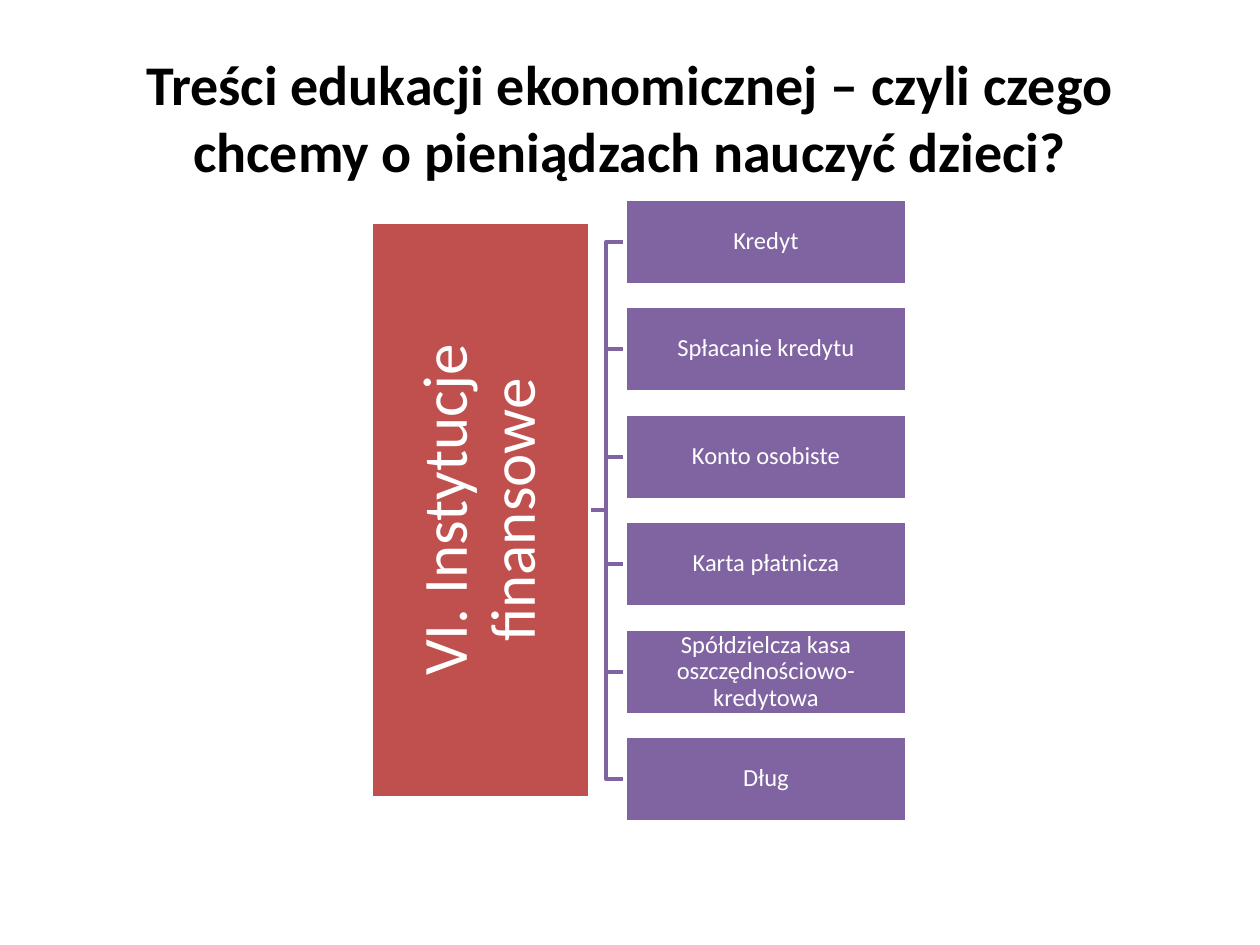
from dataclasses import dataclass

from pptx import Presentation
from pptx import util as u
from pptx.dml import color
from pptx.enum import shapes, text

SCALE = 914400 / 126
RED, PLUM, WHITE, BLACK = "C0504D", "8064A2", "FFFFFF", "000000"
LEFT, TOP, WIDE, HIGH, SPAN = 625, 199, 282, 86, 537
STEM, BEND, MID = 588, 606, 510
TERMS = [
    "Kredyt",
    "Spłacanie kredytu",
    "Konto osobiste",
    "Karta płatnicza",
    "Spółdzielcza kasa oszczędnościowo-kredytowa",
    "Dług",
]


@dataclass
class Box:
    words: str
    x: int
    y: int
    w: int
    h: int
    fill: str
    size: int
    pad: int
    turn: int = 0


def px(n: int) -> int:
    return round(n * SCALE)


def rgb(code: str) -> color.RGBColor:
    return color.RGBColor.from_string(code)


def put(item, vals: dict) -> None:
    for key, val in vals.items():
        setattr(item, key, val)


def write(shape, words: str, ink: str, font: dict, para: dict, frame: dict) -> None:
    body = shape.text_frame
    put(body, {"word_wrap": True, "vertical_anchor": text.MSO_ANCHOR.MIDDLE, **frame})
    line = body.paragraphs[0]
    put(line, {"alignment": text.PP_ALIGN.CENTER, **para})
    run = line.add_run()
    run.text = words
    put(run.font, {"name": "Calibri", **font})
    run.font.color.rgb = rgb(ink)


def edge(shape, code: str) -> None:
    shape.shadow.inherit = False
    shape.line.color.rgb = rgb(code)
    shape.line.width = u.Pt(2)


def draw_box(slide, box: Box) -> None:
    shape = slide.shapes.add_shape(
        shapes.MSO_SHAPE.RECTANGLE, *map(px, (box.x, box.y, box.w, box.h))
    )
    shape.rotation = box.turn
    shape.fill.solid()
    shape.fill.fore_color.rgb = rgb(box.fill)
    edge(shape, WHITE)
    sides = ("left", "right", "top", "bottom")
    write(
        shape, box.words, WHITE, {"size": u.Pt(box.size)}, {"line_spacing": 0.9},
        {f"margin_{side}": px(box.pad) for side in sides},
    )


def draw_link(slide, y: int) -> None:
    pen = slide.shapes.build_freeform(px(STEM), px(MID))
    spots = [(BEND, MID), (BEND, y), (LEFT, y)]
    pen.add_line_segments([(px(a), px(b)) for a, b in spots], close=False)
    shape = pen.convert_to_shape()
    shape.fill.background()
    edge(shape, PLUM)


def main() -> None:
    deck = Presentation()
    put(deck, {"slide_width": px(1260), "slide_height": px(945)})
    slide = deck.slides.add_slide(deck.slide_layouts[6])

    title = slide.shapes.add_textbox(*map(px, (63, 38, 1134, 157)))
    write(
        title, "Treści edukacji ekonomicznej – czyli czego chcemy o pieniądzach nauczyć dzieci?",
        BLACK, {"size": u.Pt(32), "bold": True}, {}, {},
    )

    tops = [TOP + round(SPAN * i / (len(TERMS) - 1)) for i in range(len(TERMS))]
    for top in tops:
        draw_link(slide, top + HIGH // 2)
    draw_box(slide, Box("VI. Instytucje finansowe", 193, 401, 575, 218, RED, 36, 4, 270))
    for term, top in zip(TERMS, tops):
        draw_box(slide, Box(term, LEFT, top, WIDE, HIGH, PLUM, 14, 1))

    deck.save("out.pptx")


if __name__ == "__main__":
    main()
